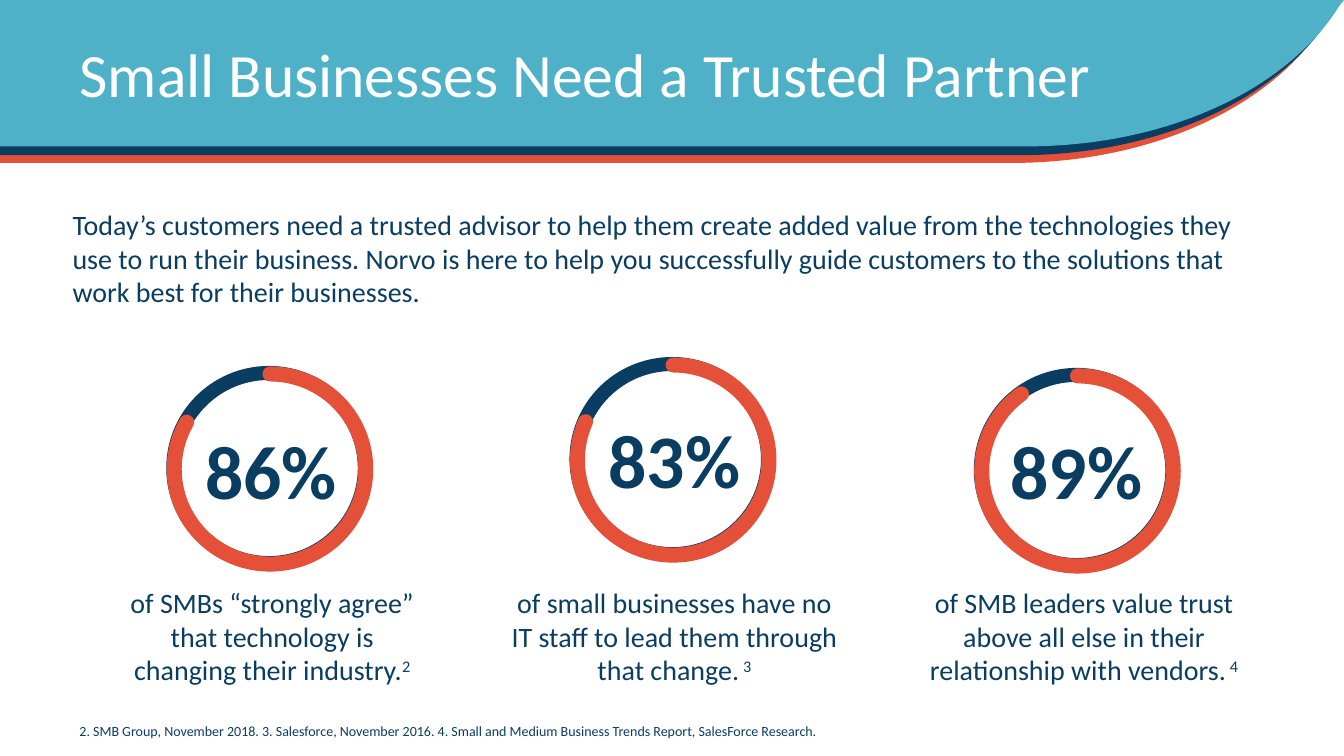
from pptx import Presentation
from pptx.dml.color import RGBColor
from pptx.enum import shapes, text
from pptx.oxml import ns, xmlchemy
from pptx.util import Pt

NAVY = RGBColor(0x0A, 0x3D, 0x62)
RED = RGBColor(0xE5, 0x50, 0x39)
TEAL = RGBColor(0x4E, 0xB1, 0xC8)
WHITE = RGBColor(0xFF, 0xFF, 0xFF)

# right edge, top, bottom, colour
BANNER_LAYERS = [(949.7, 8.6, 116.4, RED), (954.7, 5.8, 110.9, NAVY), (960, 0, 104.6, TEAL)]
# Bezier control points of the banner's corner, measured from its bottom right
CORNER = [(-3.6, -100), (-40.3, -41), (-126, 0), (-226.8, 0)]
CURVE_STEPS = 40

RING_WIDTH, RING_HEIGHT = 136.8, 135.8
# ring left, ring top, arc end angle, number, number left, number top,
# caption left, caption width, caption, footnote mark
STATISTICS = [
    (123.8, 266.4, 209.36, "86%", 133.2, 299.5, 79.9, 229,
     "of SMBs “strongly agree” that technology is changing their industry.", "2"),
    (411.8, 260, 203.63, "83%", 421.2, 291.6, 356.4, 250.6,
     "of small businesses have no IT staff to lead them through that change.", " 3"),
    (700.6, 267.8, 234, "89%", 708.5, 299.5, 655.2, 238.3,
     "of SMB leaders value trust above all else in their relationship with vendors.", " 4"),
]


def format_text(shape, size, color, alignment=text.PP_ALIGN.LEFT, bold=False):
    shape.text_frame.word_wrap = True
    paragraph = shape.text_frame.paragraphs[0]
    paragraph.alignment = alignment
    for run in paragraph.runs:
        run.font.name = "Calibri"
        run.font.size = Pt(size)
        run.font.bold = bold
        run.font.color.rgb = color


def add_ring(kind, left, top, color, width):
    ring = slide.shapes.add_shape(kind, Pt(left), Pt(top), Pt(RING_WIDTH), Pt(RING_HEIGHT))
    ring.shadow.inherit = False
    ring.fill.background()
    ring.line.color.rgb = color
    ring.line.width = Pt(width)
    return ring


presentation = Presentation()
presentation.slide_width = Pt(960)
presentation.slide_height = Pt(540)
slide = presentation.slides.add_slide(presentation.slide_layouts[1])
title, intro = slide.placeholders

# Introduction
intro.left, intro.top, intro.width, intro.height = Pt(44.6), Pt(144.7), Pt(860.4), Pt(80)
intro.text_frame.text = (
    "Today’s customers need a trusted advisor to help them create added value from the "
    "technologies they use to run their business. Norvo is here to help you successfully "
    "guide customers to the solutions that work best for their businesses.")
intro.text_frame.auto_size = text.MSO_AUTO_SIZE.NONE
paragraph = intro.text_frame.paragraphs[0]
properties = paragraph._p.get_or_add_pPr()
properties.set("marL", "0")
properties.set("indent", "0")
properties.append(xmlchemy.OxmlElement("a:buNone"))
paragraph.space_before = Pt(0)
paragraph.space_after = Pt(12)
format_text(intro, 20, NAVY)

# Statistics
for (ring_left, ring_top, end_angle, number, number_left, number_top,
     caption_left, caption_width, caption, mark) in STATISTICS:
    add_ring(shapes.MSO_SHAPE.OVAL, ring_left, ring_top, NAVY, 10)
    arc = add_ring(shapes.MSO_SHAPE.ARC, ring_left + 0.7, ring_top + 0.7, RED, 10.75)
    arc.adjustments[0] = 162
    arc.adjustments[1] = end_angle * 0.6
    arc._element.spPr.find(ns.qn("a:ln")).set("cap", "rnd")

    number_box = slide.shapes.add_textbox(Pt(number_left), Pt(number_top), Pt(121), Pt(72.7))
    number_box.text_frame.text = number
    number_box.text_frame.margin_left = number_box.text_frame.margin_right = 0
    format_text(number_box, 54, NAVY, text.PP_ALIGN.CENTER, bold=True)

    caption_box = slide.shapes.add_textbox(
        Pt(caption_left), Pt(414.7), Pt(caption_width), Pt(80))
    caption_box.text_frame.text = caption
    mark_run = caption_box.text_frame.paragraphs[0].add_run()
    mark_run.text = mark
    format_text(caption_box, 20, NAVY, text.PP_ALIGN.CENTER)
    mark_run.font._element.set("baseline", "30000")

# Sources
sources = slide.shapes.add_textbox(Pt(49.7), Pt(512.6), Pt(828), Pt(19.4))
sources.text_frame.text = (
    "2. SMB Group, November 2018. 3. Salesforce, November 2016. "
    "4. Small and Medium Business Trends Report, SalesForce Research.")
format_text(sources, 10, NAVY)

# Banner
for right, top, bottom, color in BANNER_LAYERS:
    outline = [(right, top)]
    for step in range(CURVE_STEPS + 1):
        t = step / CURVE_STEPS
        weights = [(1 - t) ** 3, 3 * t * (1 - t) ** 2, 3 * t ** 2 * (1 - t), t ** 3]
        outline.append((right + sum(w * x for w, (x, y) in zip(weights, CORNER)),
                        bottom + sum(w * y for w, (x, y) in zip(weights, CORNER))))
    outline.append((0, bottom))
    builder = slide.shapes.build_freeform(0, Pt(top))
    builder.add_line_segments([(Pt(x), Pt(y)) for x, y in outline], close=True)
    layer = builder.convert_to_shape()
    layer.shadow.inherit = False
    layer.fill.solid()
    layer.fill.fore_color.rgb = color
    layer.line.fill.background()

# Title, brought in front of the banner
slide.shapes._spTree.append(title._element)
title.left, title.top, title.width, title.height = Pt(49.7), Pt(10.8), Pt(828), Pt(72)
title.text_frame.text = "Small Businesses Need a Trusted Partner"
title.text_frame.vertical_anchor = text.MSO_ANCHOR.BOTTOM
title.text_frame.auto_size = text.MSO_AUTO_SIZE.NONE
title.text_frame.paragraphs[0].line_spacing = 0.9
format_text(title, 44, WHITE)

presentation.save("out.pptx")
